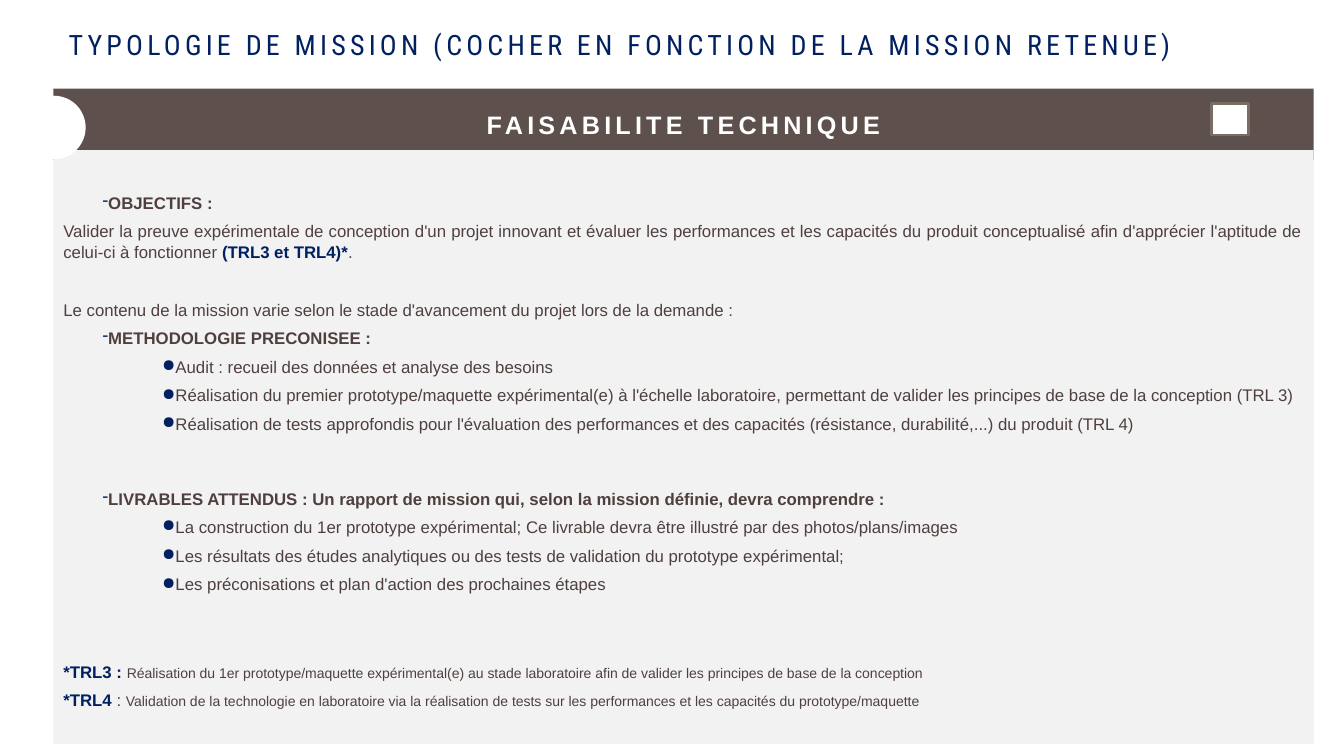
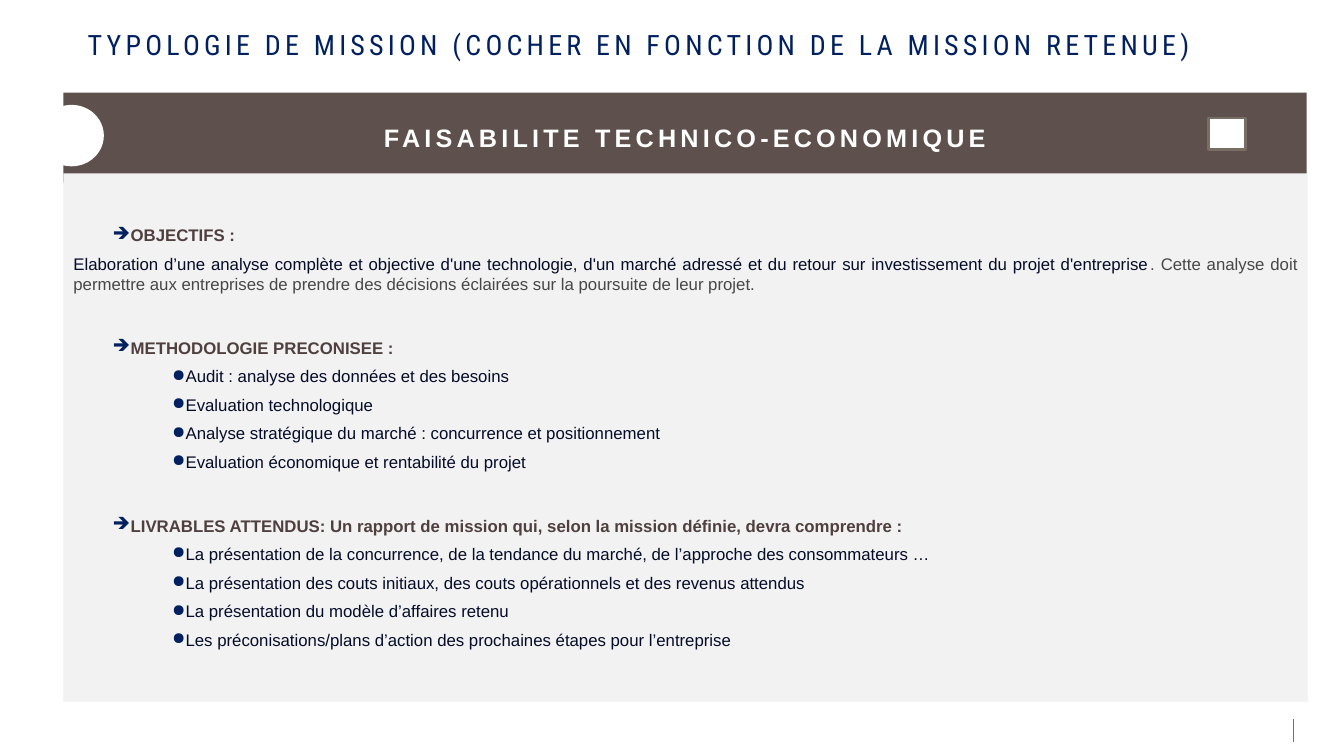
from lxml.etree import SubElement
from pptx import Presentation
from pptx.dml.color import RGBColor
from pptx.enum.shapes import MSO_CONNECTOR, MSO_SHAPE
from pptx.enum.text import MSO_ANCHOR, PP_ALIGN
from pptx.oxml.ns import qn
from pptx.util import Inches, Pt

# Shared colours and title
NAVY, BROWN, TEXT = "002060", "5E514D", "4F403F"
PALE, WHITE, EDGE = "F2F2F2", "FFFFFF", "786E64"
INK, GREY = "040C28", "474747"
TITLE = "TYPOLOGIE DE MISSION (COCHER EN FONCTION DE LA MISSION RETENUE)"

# Left margin in inches for each kind of bulleted row
MARGIN = {"head": 0, "item": 0.59}
INDENT = 0.39


def color(code):
    return RGBColor.from_string(code)


def write(para, text, size=12, font="Arial", ink=TEXT, bold=False, track=0):
    """Add one formatted run to a paragraph."""
    run = para.add_run()
    run.text = text
    run.font.size, run.font.name, run.font.bold = Pt(size), font, bold
    run.font.color.rgb = color(ink)
    if track:
        run.font._element.set("spc", str(track * 100))


def bullet(para, mark, left):
    """Give a paragraph a navy bullet and a first-line indent."""
    props = para._p.get_or_add_pPr()
    props.set("marL", str(Inches(left)))
    props.set("indent", str(Inches(INDENT)))
    tint = SubElement(props, qn("a:buClr"))
    SubElement(tint, qn("a:srgbClr"), val=NAVY)
    SubElement(props, qn("a:buChar"), char=mark)


def shape(slide, box, fill, kind=MSO_SHAPE.RECTANGLE, edge=None):
    item = slide.shapes.add_shape(kind, *map(Inches, box))
    item.shadow.inherit = False
    item.fill.solid()
    item.fill.fore_color.rgb = color(fill)
    if edge:
        item.line.color.rgb = color(edge)
        item.line.width = Pt(2)
    else:
        item.line.fill.background()
    return item


def title(slide, left):
    frame = slide.shapes.add_textbox(
        *map(Inches, (left, 0.12, 12.15, 0.69))).text_frame
    frame.word_wrap = True
    frame.vertical_anchor = MSO_ANCHOR.MIDDLE
    frame.margin_left = frame.margin_right = 0
    frame.margin_top = frame.margin_bottom = 0
    para = frame.paragraphs[0]
    para.line_spacing = 0.85
    write(para, TITLE, size=20, font="Roboto Condensed", ink=NAVY, track=3)


def band(slide, box, text):
    frame = shape(slide, box, BROWN).text_frame
    frame.vertical_anchor = MSO_ANCHOR.MIDDLE
    para = frame.paragraphs[0]
    para.alignment = PP_ALIGN.CENTER
    write(para, text, size=18, ink=WHITE, bold=True, track=3)


def panel(slide, box, rows, mark, ink=TEXT, top=None):
    """Fill a pale panel; a row is kind, space before, then its runs."""
    frame = shape(slide, box, PALE).text_frame
    frame.word_wrap = True
    frame.vertical_anchor = MSO_ANCHOR.MIDDLE
    if top:
        frame.vertical_anchor = MSO_ANCHOR.TOP
        frame.margin_top = Inches(top)
    for spot, (kind, gap, *runs) in enumerate(rows):
        para = frame.add_paragraph() if spot else frame.paragraphs[0]
        para.alignment = PP_ALIGN.JUSTIFY
        para.space_before = Pt(gap)
        if kind in MARGIN:
            bullet(para, mark if kind == "head" else "●", MARGIN[kind])
        base = {"bold": True} if kind == "head" else {"ink": ink}
        for text, style in runs:
            write(para, text, **{**base, **style})


def marks(slide, disc, left, top):
    """Draw the white disc and the tick box on the band."""
    shape(slide, disc, WHITE, MSO_SHAPE.OVAL)
    shape(slide, (left, top, 0.36, 0.31), WHITE, edge=EDGE)


def rule(slide, left, top, end):
    line = slide.shapes.add_connector(
        MSO_CONNECTOR.STRAIGHT, *map(Inches, (left, end, left, top)))
    line.line.color.rgb = color(EDGE)
    line.line.width = Pt(0.75)
    SubElement(line._element.spPr, qn("a:effectLst"))


def row(kind, text, gap=6):
    return kind, gap, (text, {})


# Panel texts
KEY = {"ink": NAVY, "bold": True}
NOTE = {"size": 10}

TECH = [
    row("head", "OBJECTIFS :", 0),
    ("body", 6,
     ("Valider la preuve expérimentale de conception d'un projet innovant et "
      "évaluer les performances et les capacités du produit conceptualisé "
      "afin d'apprécier l'aptitude de celui-ci à fonctionner ", {}),
     ("(TRL3 et TRL4)*", KEY), (".", {})),
    row("body", "Le contenu de la mission varie selon le stade d'avancement "
        "du projet lors de la demande :", 27),
    row("head", "METHODOLOGIE PRECONISEE :"),
    row("item", "Audit : recueil des données et analyse des besoins"),
    row("item", "Réalisation du premier prototype/maquette expérimental(e) à "
        "l'échelle laboratoire, permettant de valider les principes de base "
        "de la conception (TRL 3)"),
    row("item", "Réalisation de tests approfondis pour l'évaluation des "
        "performances et des capacités (résistance, durabilité,...) du "
        "produit (TRL 4)"),
    row("head", "LIVRABLES ATTENDUS : Un rapport de mission qui, selon la "
        "mission définie, devra comprendre :", 39),
    row("item", "La construction du 1er prototype expérimental; Ce livrable "
        "devra être illustré par des photos/plans/images"),
    row("item", "Les résultats des études analytiques ou des tests de "
        "validation du prototype expérimental;"),
    row("item", "Les préconisations et plan d'action des prochaines étapes"),
    ("body", 48, ("*TRL3 : ", KEY),
     ("Réalisation du 1er prototype/maquette expérimental(e) au stade "
      "laboratoire afin de valider les principes de base de la conception",
      NOTE)),
    ("body", 6, ("*TRL4 ", KEY), (": ", {}),
     ("Validation de la technologie en laboratoire via la réalisation de "
      "tests sur les performances et les capacités du prototype/maquette",
      NOTE)),
]

ECO = [
    row("head", "OBJECTIFS :", 0),
    ("body", 6,
     ("Elaboration d’une analyse complète et objective d'une technologie, "
      "d'un marché adressé et du retour sur investissement du projet "
      "d'entreprise", {}),
     (". Cette analyse doit permettre aux entreprises de prendre des "
      "décisions éclairées sur la poursuite de leur projet.",
      {"ink": GREY})),
    row("head", "METHODOLOGIE PRECONISEE :", 31),
    row("item", "Audit : analyse des données et des besoins"),
    row("item", "Evaluation technologique"),
    row("item", "Analyse stratégique du marché : concurrence et "
        "positionnement"),
    row("item", "Evaluation économique et rentabilité du projet"),
    row("head", "LIVRABLES ATTENDUS: Un rapport de mission qui, selon la "
        "mission définie, devra comprendre :", 31),
    row("item", "La présentation de la concurrence, de la tendance du "
        "marché, de l’approche des consommateurs …"),
    row("item", "La présentation des couts initiaux, des couts opérationnels "
        "et des revenus attendus"),
    row("item", "La présentation du modèle d’affaires retenu"),
    row("item", "Les préconisations/plans d’action des prochaines étapes "
        "pour l’entreprise"),
]


def main():
    deck = Presentation()
    deck.slide_width, deck.slide_height = Inches(13.33), Inches(7.5)
    blank = deck.slide_layouts[6]

    # Technical feasibility
    slide = deck.slides.add_slide(blank)
    title(slide, 0.68)
    band(slide, (0.53, 0.88, 12.5, 0.71), "FAISABILITE TECHNIQUE")
    panel(slide, (0.53, 1.49, 12.5, 5.89), TECH, "-", top=0.42)
    marks(slide, (0.22, 0.95, 0.63, 0.63), 12.02, 1.03)

    # Technical and economic feasibility
    slide = deck.slides.add_slide(blank)
    title(slide, 0.87)
    band(slide, (0.63, 0.92, 12.33, 0.89), "FAISABILITE TECHNICO-ECONOMIQUE")
    panel(slide, (0.63, 1.72, 12.34, 5.24), ECO, "➔", ink=INK)
    marks(slide, (0.39, 1.04, 0.64, 0.61), 11.99, 1.17)
    rule(slide, 12.83, 7.13, 7.36)

    deck.save("out.pptx")


if __name__ == "__main__":
    main()
